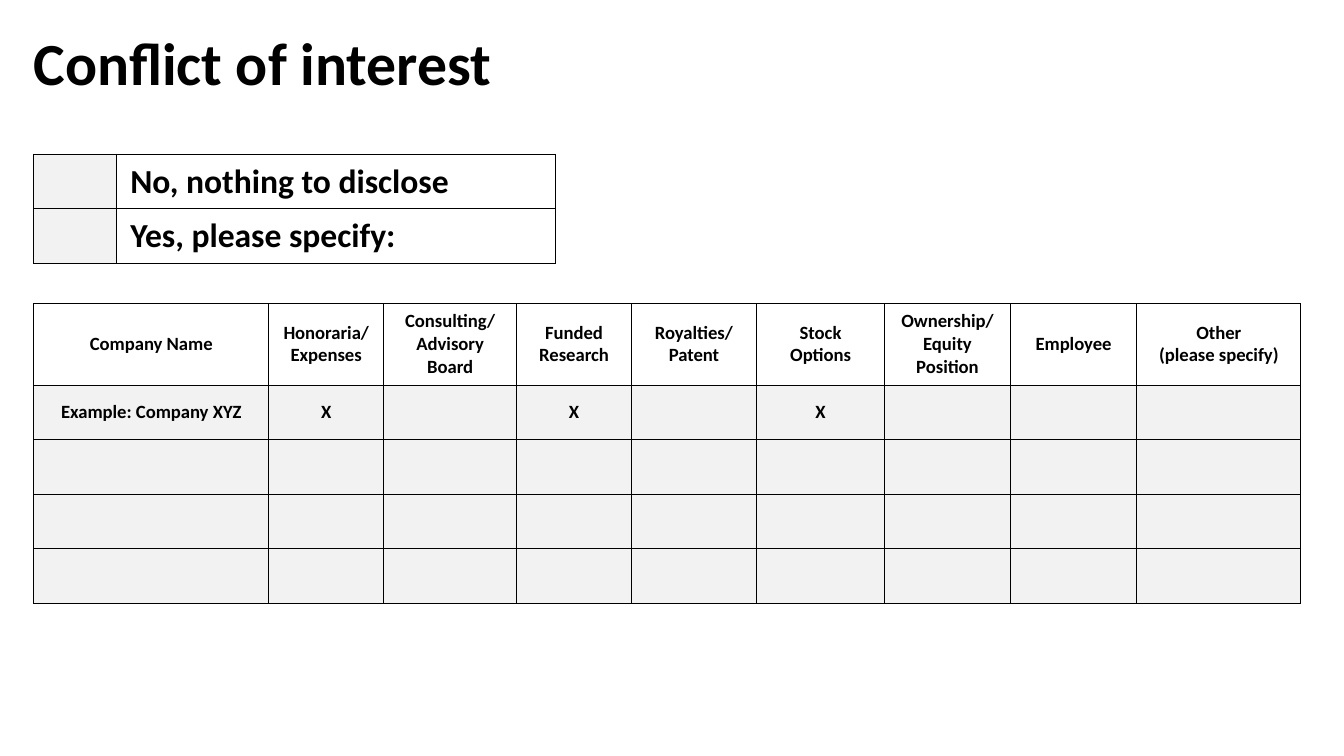
from lxml import etree
from pptx import Presentation
from pptx import util as u
from pptx.dml.color import RGBColor
from pptx.enum import text
from pptx.oxml import ns


class Theme:
    font = "Calibri"
    ink = RGBColor.from_string("000000")
    entry_fill = RGBColor.from_string("F2F2F2")
    title_size = u.Pt(32)
    choice_size = u.Pt(18)
    grid_size = u.Pt(10)
    border = u.Pt(0.5)


def write(paragraph, words, size, alignment):
    paragraph.alignment = alignment
    run = paragraph.add_run()
    run.text = words
    run.font.name = Theme.font
    run.font.size = size
    run.font.bold = True
    run.font.color.rgb = Theme.ink


def add_form_table(top, widths, heights, rows, is_entry, size, alignment):
    """Add a bordered table; is_entry(row, column) tells which cells are shaded."""
    frame = slide.shapes.add_table(len(heights), len(widths), u.Pt(18), u.Pt(top),
                                   u.Pt(sum(widths)), u.Pt(sum(heights)))
    table = frame.table
    table.first_row = table.horz_banding = False
    for column, width in zip(table.columns, widths):
        column.width = u.Pt(width)
    for row, height in zip(table.rows, heights):
        row.height = u.Pt(height)

    for r, row in enumerate(rows):
        for c, words in enumerate(row):
            cell = table.cell(r, c)
            cell.vertical_anchor = text.MSO_ANCHOR.MIDDLE
            properties = cell._tc.get_or_add_tcPr()
            for side in ("lnL", "lnR", "lnT", "lnB"):
                line = etree.SubElement(properties, ns.qn(f"a:{side}"), w=str(Theme.border))
                fill = etree.SubElement(line, ns.qn("a:solidFill"))
                etree.SubElement(fill, ns.qn("a:srgbClr"), val=str(Theme.ink))
            if is_entry(r, c):
                cell.fill.solid()
                cell.fill.fore_color.rgb = Theme.entry_fill
            else:
                cell.fill.background()
            if words:
                for i, line_words in enumerate(words.split("\n")):
                    frame_text = cell.text_frame
                    paragraph = frame_text.add_paragraph() if i else frame_text.paragraphs[0]
                    write(paragraph, line_words, size, alignment)


presentation = Presentation()
presentation.slide_width = u.Pt(720)
presentation.slide_height = u.Pt(405)
slide = presentation.slides.add_slide(presentation.slide_layouts[5])

# Title
title = slide.shapes.title
title.left, title.top, title.width, title.height = u.Pt(10.8), u.Pt(11.5), u.Pt(593), u.Pt(47.5)
title.text_frame.vertical_anchor = text.MSO_ANCHOR.MIDDLE
title.text_frame.word_wrap = True
heading = title.text_frame.paragraphs[0]
heading.line_spacing = 0.9
write(heading, "Conflict of interest", Theme.title_size, text.PP_ALIGN.LEFT)

# Disclosure details
row_height = 29.2
headers = ["Company Name", "Honoraria/ Expenses", "Consulting/\nAdvisory Board",
           "Funded Research", "Royalties/ Patent", "Stock\nOptions",
           "Ownership/\nEquity\nPosition", "Employee", "Other\n(please specify)"]
example = ["Example: Company XYZ", "X", "", "X", "", "X", "", "", ""]
blank_rows = [[""] * len(headers)] * 3
add_form_table(
    top=162.6,
    widths=[126, 61.5, 71.3, 61.5, 67, 68.7, 67.3, 67.8, 87.9],
    heights=[43.4] + [row_height] * 4,
    rows=[headers, example] + blank_rows,
    is_entry=lambda row, column: row > 0,
    size=Theme.grid_size,
    alignment=text.PP_ALIGN.CENTER,
)

# Yes or no choice
add_form_table(
    top=82.7,
    widths=[44.6, 235],
    heights=[row_height] * 2,
    rows=[["", "No, nothing to disclose"], ["", "Yes, please specify:"]],
    is_entry=lambda row, column: column == 0,
    size=Theme.choice_size,
    alignment=text.PP_ALIGN.LEFT,
)

presentation.save("out.pptx")
